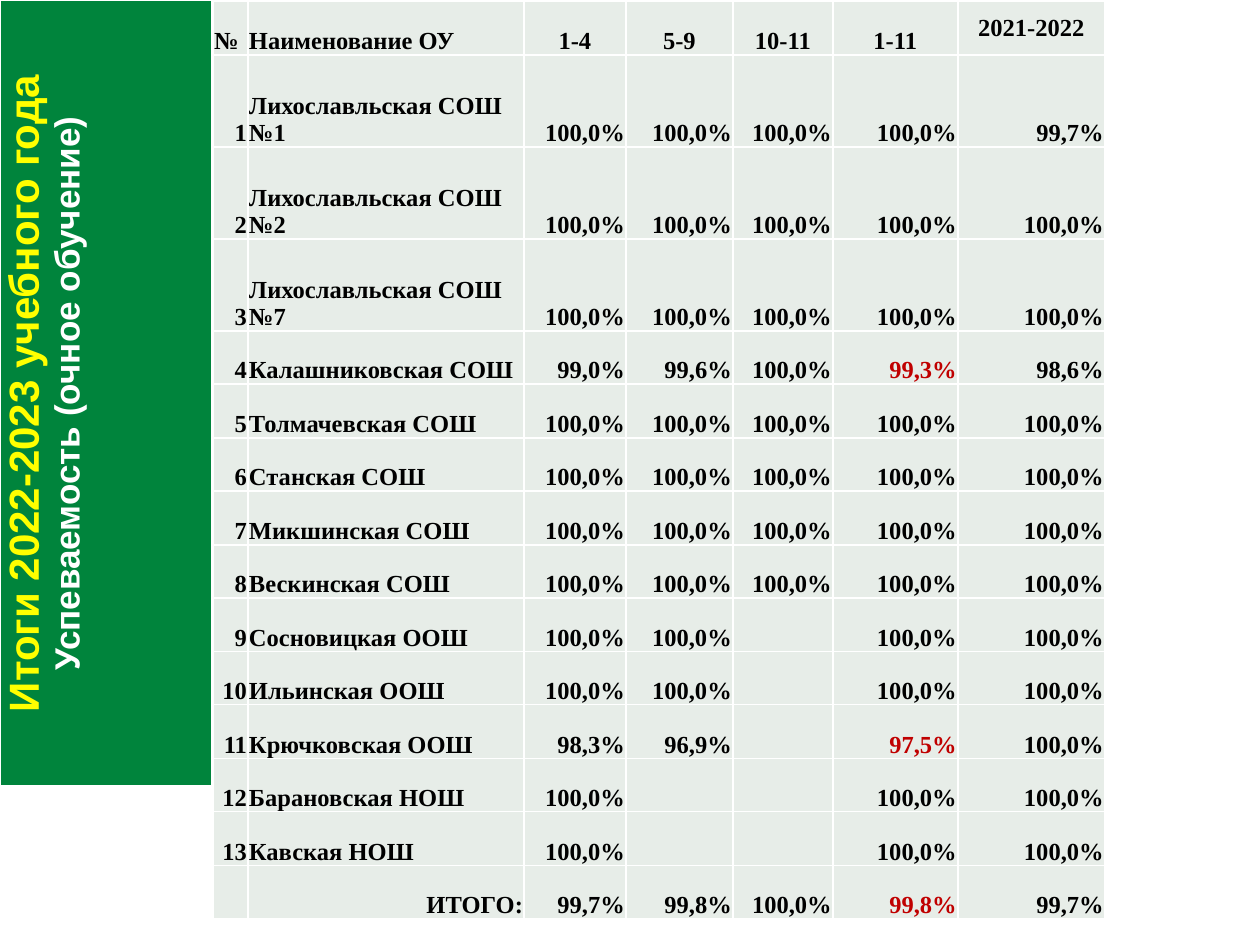
import pptx
import pptx.util
import pptx.dml.color
import pptx.enum.text
import pptx.oxml

RGBColor = pptx.dml.color.RGBColor
Align = pptx.enum.text.PP_ALIGN
Anchor = pptx.enum.text.MSO_ANCHOR

GREEN = RGBColor(0x00, 0x84, 0x3C)
PALE = RGBColor(0xE7, 0xED, 0xE8)
YELLOW = RGBColor(0xFF, 0xFF, 0x00)
WHITE = RGBColor(0xFF, 0xFF, 0xFF)
BLACK = RGBColor(0x00, 0x00, 0x00)
RED = RGBColor(0xC0, 0x00, 0x00)

SCALE = 914400 / 126
NS = "http://schemas.openxmlformats.org/drawingml/2006/main"

TITLE = [
    ("Итоги 2022-2023 учебного года", 24, YELLOW),
    ("Успеваемость (очное обучение)", 20, WHITE),
]
HEAD = ["№", "Наименование ОУ", "1-4", "5-9", "10-11", "1-11", "2021-2022"]
FULL = "100,0%"
SCHOOLS = [
    ("Лихославльская СОШ №1", FULL, FULL, FULL, FULL, "99,7%"),
    ("Лихославльская СОШ №2", FULL, FULL, FULL, FULL, FULL),
    ("Лихославльская СОШ №7", FULL, FULL, FULL, FULL, FULL),
    ("Калашниковская СОШ", "99,0%", "99,6%", FULL, "99,3%", "98,6%"),
    ("Толмачевская СОШ", FULL, FULL, FULL, FULL, FULL),
    ("Станская СОШ", FULL, FULL, FULL, FULL, FULL),
    ("Микшинская СОШ", FULL, FULL, FULL, FULL, FULL),
    ("Вескинская СОШ", FULL, FULL, FULL, FULL, FULL),
    ("Сосновицкая ООШ", FULL, FULL, "", FULL, FULL),
    ("Ильинская ООШ", FULL, FULL, "", FULL, FULL),
    ("Крючковская ООШ", "98,3%", "96,9%", "", "97,5%", FULL),
    ("Барановская НОШ", FULL, "", "", FULL, FULL),
    ("Кавская НОШ", FULL, "", "", FULL, FULL),
]
TOTAL = ["", "ИТОГО:", "99,7%", "99,8%", FULL, "99,8%", "99,7%"]
COLS = [35, 276, 102, 107, 100, 125, 147]
ROWS = [54] + [92] * 3 + [53, 54] * 5 + [53]
SUM_COL = 5


def px(count):
    return pptx.util.Emu(round(count * SCALE))


class Page:
    def __init__(self, deck, font, size):
        self.slide = deck.slides.add_slide(deck.slide_layouts[6])
        self.font = font
        self.size = size

    def table(self, left, top, cols, rows):
        frame = self.slide.shapes.add_table(
            len(rows), len(cols), px(left), px(top), px(sum(cols)), px(sum(rows)))
        grid = frame.table
        grid.first_row = False
        grid.horz_banding = False
        for col, width in zip(grid.columns, cols):
            col.width = px(width)
        for row, height in zip(grid.rows, rows):
            row.height = px(height)
        return grid

    def cell(self, cell, fill, base=1):
        props = cell._tc.get_or_add_tcPr()
        for side, width in (("L", 1), ("R", 1), ("T", 1), ("B", base)):
            props.append(pptx.oxml.parse_xml(
                f'<a:ln{side} xmlns:a="{NS}" w="{pptx.util.Pt(width)}">'
                f'<a:solidFill><a:srgbClr val="{WHITE}"/></a:solidFill></a:ln{side}>'))
        cell.fill.solid()
        cell.fill.fore_color.rgb = fill
        cell.margin_left = cell.margin_right = cell.margin_top = px(1)
        cell.margin_bottom = 0
        cell.vertical_anchor = Anchor.BOTTOM
        return props

    def text(self, para, align, color, font=None, size=None):
        para.alignment = align
        for run in para.runs:
            run.font.name = font or self.font
            run.font.size = pptx.util.Pt(size or self.size)
            run.font.bold = True
            run.font.color.rgb = color

    def banner(self, lines):
        cell = self.table(0, 0, [212], [787]).cell(0, 0)
        self.cell(cell, GREEN, 3).set("vert", "vert270")
        frame = cell.text_frame
        frame.text = "\n".join(line[0] for line in lines)
        for para, (_, size, color) in zip(frame.paragraphs, lines):
            self.text(para, Align.CENTER, color, "Arial", size)

    def marks(self, data):
        grid = self.table(213, 1, COLS, ROWS)
        for r, line in enumerate(data):
            for c, word in enumerate(line):
                cell = grid.cell(r, c)
                self.cell(cell, PALE)
                cell.text_frame.text = word
                if r == 0:
                    align = Align.LEFT if c < 2 else Align.CENTER
                elif c == 1 and r < len(data) - 1:
                    align = Align.LEFT
                else:
                    align = Align.RIGHT
                low = r > 0 and c == SUM_COL and word != FULL
                self.text(cell.text_frame.paragraphs[0], align, RED if low else BLACK)
        grid.cell(0, len(HEAD) - 1).vertical_anchor = Anchor.MIDDLE


def main():
    deck = pptx.Presentation()
    deck.slide_width = px(1260)
    deck.slide_height = px(945)
    page = Page(deck, "Times New Roman", 14)
    page.banner(TITLE)
    body = [[str(i), *school] for i, school in enumerate(SCHOOLS, 1)]
    page.marks([HEAD, *body, TOTAL])
    deck.save("out.pptx")


if __name__ == "__main__":
    main()
